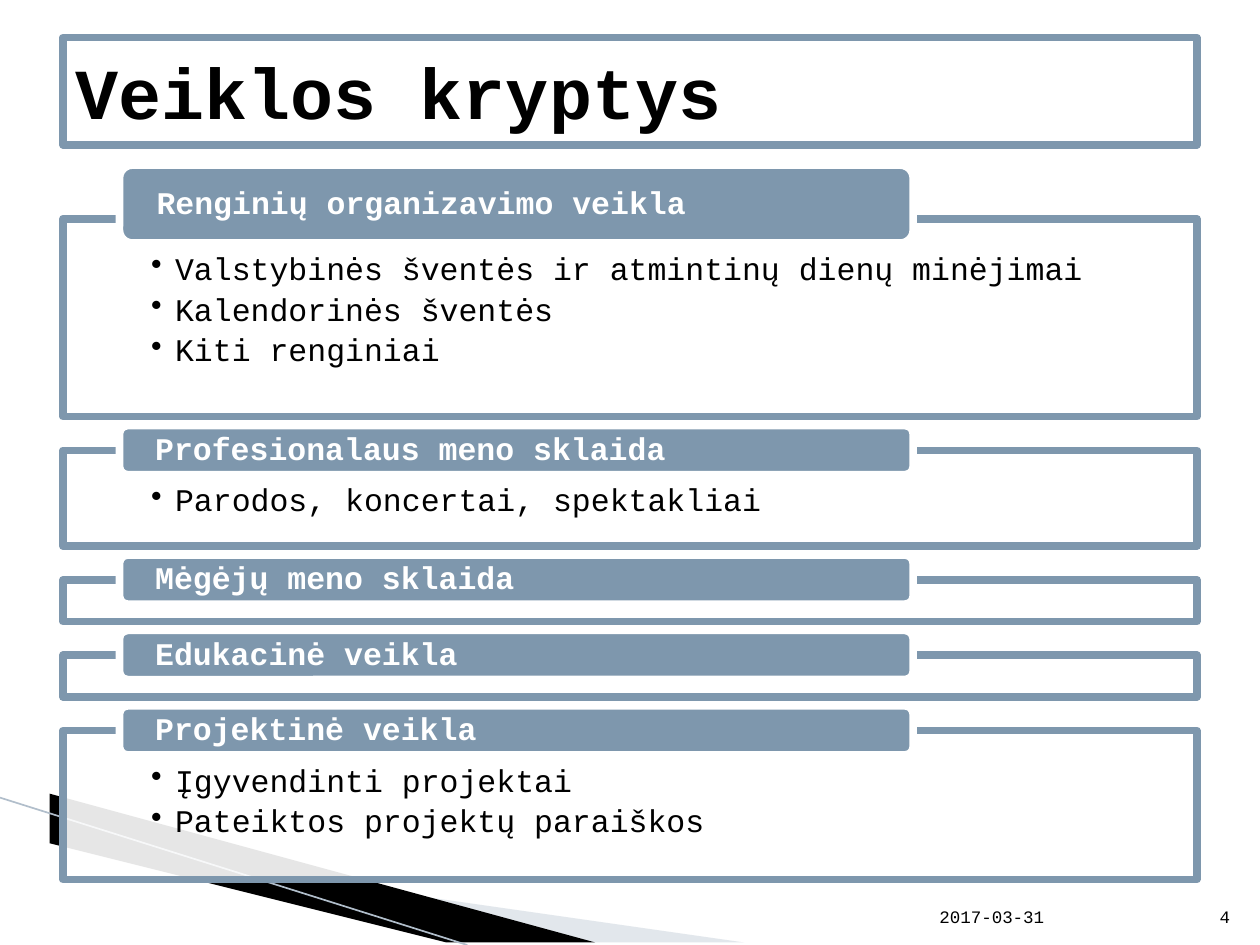
from lxml.etree import SubElement
from pptx import Presentation
from pptx.dml.color import RGBColor
from pptx.enum.shapes import MSO_CONNECTOR, MSO_SHAPE
from pptx.enum.text import MSO_ANCHOR, MSO_AUTO_SIZE, PP_ALIGN
from pptx.oxml.ns import qn
from pptx.util import Cm, Pt

BLUE, WHITE, BLACK = "7E97AD", "FFFFFF", "000000"
LEFT, WIDTH = 1.27, 22.86
OVERLAP, GAP = 0.49, 0.18
SECTIONS = [
    ("Renginių organizavimo veikla", 1.57, 3.99,
     ["Valstybinės šventės ir atmintinų dienų minėjimai",
      "Kalendorinės šventės", "Kiti renginiai"]),
    ("Profesionalaus meno sklaida", 0.99, 1.93,
     ["Parodos, koncertai, spektakliai"]),
    ("Mėgėjų meno sklaida", 0.99, 0.84, []),
    ("Edukacinė veikla", 0.99, 0.84, []),
    ("Projektinė veikla", 0.99, 3.0,
     ["Įgyvendinti projektai", "Pateiktos projektų paraiškos"]),
]


def rgb(value):
    return RGBColor.from_string(value)


class SlideBuilder:
    font = "Courier New"
    border = Pt(4.33)

    def __init__(self, slide):
        self.slide = slide

    def paint(self, shape, fill, line=None, opacity=100):
        shape.fill.solid()
        shape.fill.fore_color.rgb = rgb(fill)
        if opacity < 100:
            color = shape._element.spPr.find(qn("a:solidFill"))[0]
            SubElement(color, qn("a:alpha"), val=str(opacity * 1000))
        if line:
            shape.line.color.rgb = rgb(line)
            shape.line.width = self.border
        else:
            shape.line.fill.background()

    def set_text(self, shape, lines, size, color=BLACK, bold=False,
                 anchor=MSO_ANCHOR.MIDDLE, align=PP_ALIGN.LEFT, insets=None):
        frame = shape.text_frame
        frame.text = "\n".join(lines)
        frame.word_wrap = True
        frame.auto_size = MSO_AUTO_SIZE.NONE
        frame.vertical_anchor = anchor
        if insets:
            (frame.margin_left, frame.margin_top, frame.margin_right,
             frame.margin_bottom) = [Cm(inset) for inset in insets]
        for paragraph in frame.paragraphs:
            paragraph.alignment = align
            for run in paragraph.runs:
                run.font.name = self.font
                run.font.size = Pt(size)
                run.font.bold = bold
                run.font.color.rgb = rgb(color)

    def title(self, text, left, top, width, height):
        title = self.slide.shapes.title
        title.left, title.top = Cm(left), Cm(top)
        title.width, title.height = Cm(width), Cm(height)
        self.paint(title, WHITE, BLUE)
        self.set_text(title, [text], 41, bold=True)

    def box(self, kind, left, top, width, height):
        box = self.slide.shapes.add_shape(
            kind, Cm(left), Cm(top), Cm(width), Cm(height))
        box.shadow.inherit = False
        return box

    def panel(self, items, top, height):
        panel = self.box(MSO_SHAPE.RECTANGLE, LEFT, top, WIDTH, height)
        self.paint(panel, WHITE, BLUE, opacity=90)
        if not items:
            return
        self.set_text(panel, items, 18, anchor=MSO_ANCHOR.TOP,
                      insets=(1.78, 0.69, 1.78, 0.36))
        for paragraph in panel.text_frame.paragraphs:
            properties = paragraph._p.get_or_add_pPr()
            properties.set("marL", str(Cm(0.48)))
            properties.set("indent", str(-Cm(0.48)))
            SubElement(properties, qn("a:buChar"), char="•")
            paragraph.line_spacing = 0.9
            paragraph.space_after = Pt(3.9)

    def header(self, text, top, height):
        header = self.box(MSO_SHAPE.ROUNDED_RECTANGLE, 2.41, top, 16, height)
        self.paint(header, BLUE, WHITE)
        self.set_text(header, [text], 18, WHITE, bold=True,
                      insets=(0.67, 0, 0.67, 0))
        header.text_frame.paragraphs[0].line_spacing = 0.9

    def wedge(self, points, fill, opacity=100):
        outline = self.slide.shapes.build_freeform(
            *points[0], scale=float(Cm(1)))
        outline.add_line_segments(points[1:], close=True)
        wedge = outline.convert_to_shape()
        wedge.shadow.inherit = False
        self.paint(wedge, fill, opacity=opacity)

    def line(self, start, end, color, width):
        line = self.slide.shapes.add_connector(
            MSO_CONNECTOR.STRAIGHT, *[Cm(value) for value in start + end])
        line.line.color.rgb = rgb(color)
        line.line.width = Pt(width)
        SubElement(line._element.spPr, qn("a:effectLst"))

    def footer(self, text, left, width, align):
        footer = self.slide.shapes.add_textbox(
            Cm(left), Cm(17.8), Cm(width), Cm(1.02))
        self.set_text(footer, [text], 10, anchor=MSO_ANCHOR.BOTTOM,
                      align=align)


def main():
    deck = Presentation()
    deck.slide_width, deck.slide_height = Cm(25.4), Cm(19.05)
    builder = SlideBuilder(deck.slides.add_slide(deck.slide_layouts[5]))

    builder.wedge([(1.4, 16.54), (15.11, 19.05), (11.58, 19.05),
                   (1.4, 16.51)], "B7C4D0", opacity=40)
    builder.wedge([(1.35, 16.48), (11.61, 19.05), (9.45, 19.05),
                   (1.37, 16.51)], BLACK)
    builder.line((0, 16.08), (9.42, 19.05), "B1BECB", 0.95)
    builder.title("Veiklos kryptys", LEFT, 0.76, WIDTH, 2.16)

    top = 3.33
    for heading, header_height, panel_height, items in SECTIONS:
        panel_top = top + header_height - OVERLAP
        builder.panel(items, panel_top, panel_height)
        builder.header(heading, top, header_height)
        top = panel_top + panel_height + GAP

    builder.footer("2017-03-31", 18.69, 5.33, PP_ALIGN.LEFT)
    builder.footer("4", 24.03, 1.02, PP_ALIGN.RIGHT)
    deck.save("out.pptx")


if __name__ == "__main__":
    main()
